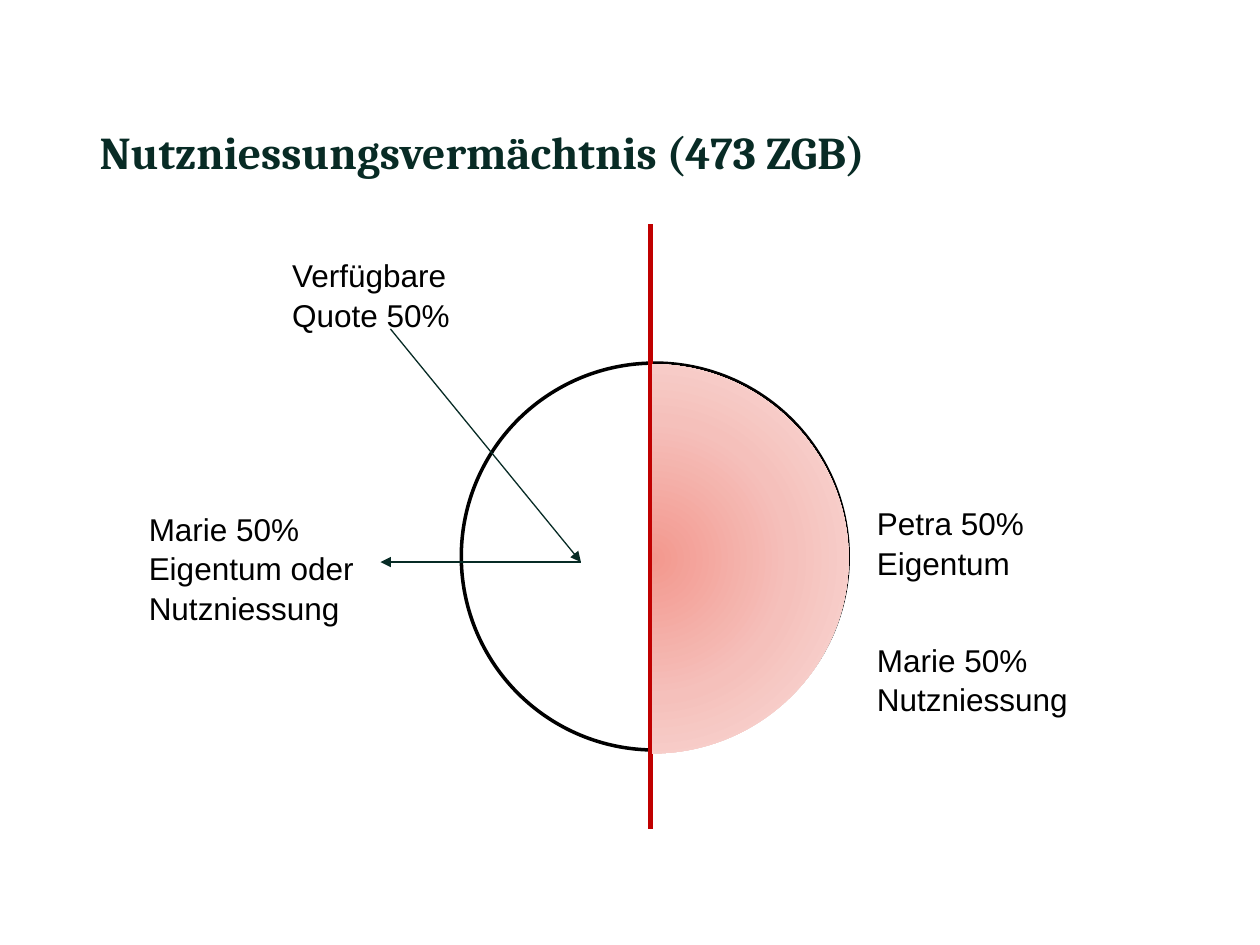
from lxml import etree
from pptx import Presentation
from pptx.dml import color
from pptx.enum import shapes, text
from pptx.oxml import ns
from pptx.util import Cm, Pt


def paint(fill, shade):
    fill.solid()
    fill.fore_color.rgb = color.RGBColor.from_string(shade)


def write(words, box, font="Arial", size=18, shade="000000", bold=False, gap=1.05):
    frame = slide.shapes.add_textbox(*map(Cm, box)).text_frame
    frame.word_wrap = True
    frame.vertical_anchor = text.MSO_ANCHOR.TOP
    frame.margin_left = frame.margin_right = 0
    frame.margin_top = frame.margin_bottom = 0
    frame.text = words
    for para in frame.paragraphs:
        para.line_spacing = gap
        para.font.name = font
        para.font.size = Pt(size)
        para.font.bold = bold
        paint(para.font.fill, shade)


deck = Presentation()
deck.slide_width, deck.slide_height = Cm(25.4), Cm(19.05)
slide = deck.slides.add_slide(deck.slide_layouts[6])

write("Nutzniessungsvermächtnis (473 ZGB)", (2.01, 2.51, 18.42, 3.15),
      font="Cambria", size=26, shade="082B25", bold=True, gap=1)
write("Marie 50%\nNutzniessung", (17.68, 12.88, 3.96, 1.5))
write("Petra 50%\nEigentum", (17.68, 10.13, 3.23, 2.34))

ring = slide.shapes.add_shape(
    shapes.MSO_SHAPE.OVAL, Cm(9.3), Cm(7.32), Cm(7.8), Cm(7.8))
ring.shadow.inherit = False
paint(ring.fill, "FFFFFF")
paint(ring.line.fill, "000000")
ring.line.width = Pt(2)

lines = [
    ((13.11, 4.52, 13.11, 16.71), "C00000", 3, False),
    ((7.87, 6.63, 11.71, 11.33), "072B25", 0.75, True),
    ((11.71, 11.33, 7.67, 11.33), "072B25", 0.75, True),
]
for ends, shade, width, arrow in lines:
    line = slide.shapes.add_connector(
        shapes.MSO_CONNECTOR.STRAIGHT, *map(Cm, ends))
    paint(line.line.fill, shade)
    line.line.width = Pt(width)
    if arrow:
        etree.SubElement(line.line._ln, ns.qn("a:tailEnd"), type="triangle")
    etree.SubElement(line._element.spPr, ns.qn("a:effectLst"))

half = slide.shapes.add_shape(
    shapes.MSO_SHAPE.PIE, Cm(9.19), Cm(7.34), Cm(7.92), Cm(7.85))
half.shadow.inherit = False
half.adjustments[0], half.adjustments[1] = 162, 54
half.line.fill.background()
half.fill.gradient()
grad = half._element.spPr.find(ns.qn("a:gradFill"))
for child in list(grad):
    grad.remove(child)
stops = etree.SubElement(grad, ns.qn("a:gsLst"))
for place, shade in ((0, "F3988E"), (50, "F5C0BB"), (100, "FAE0DE")):
    stop = etree.SubElement(stops, ns.qn("a:gs"), pos=str(place * 1000))
    etree.SubElement(stop, ns.qn("a:srgbClr"), val=shade)
round_ = etree.SubElement(grad, ns.qn("a:path"), path="circle")
etree.SubElement(round_, ns.qn("a:fillToRect"),
                 {side: "50000" for side in "ltrb"})

write("Marie 50%\nEigentum oder Nutzniessung", (3, 10.24, 4.67, 2.24))
write("Verfügbare Quote 50%", (5.89, 5.13, 3.96, 1.5))

deck.save("out.pptx")
